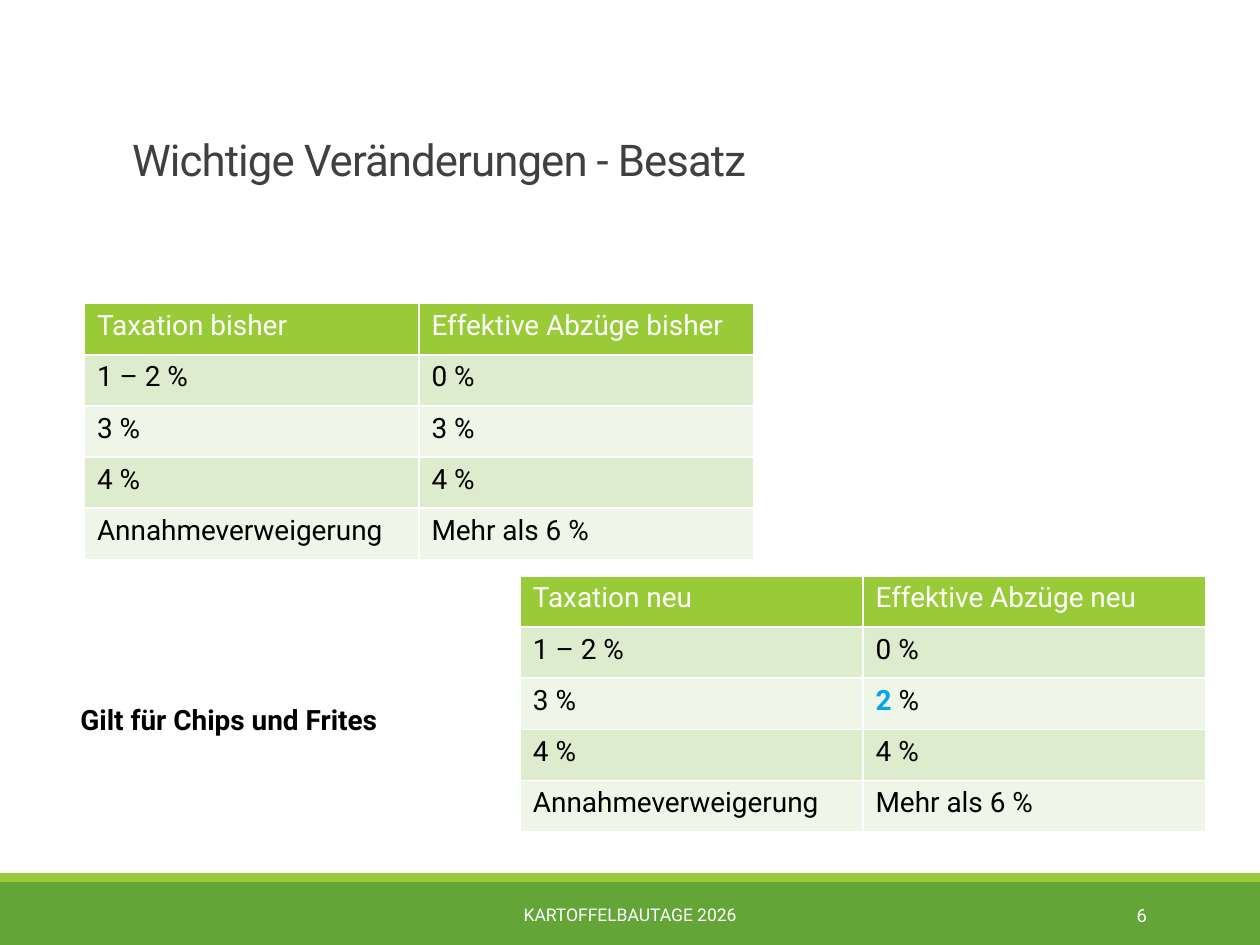
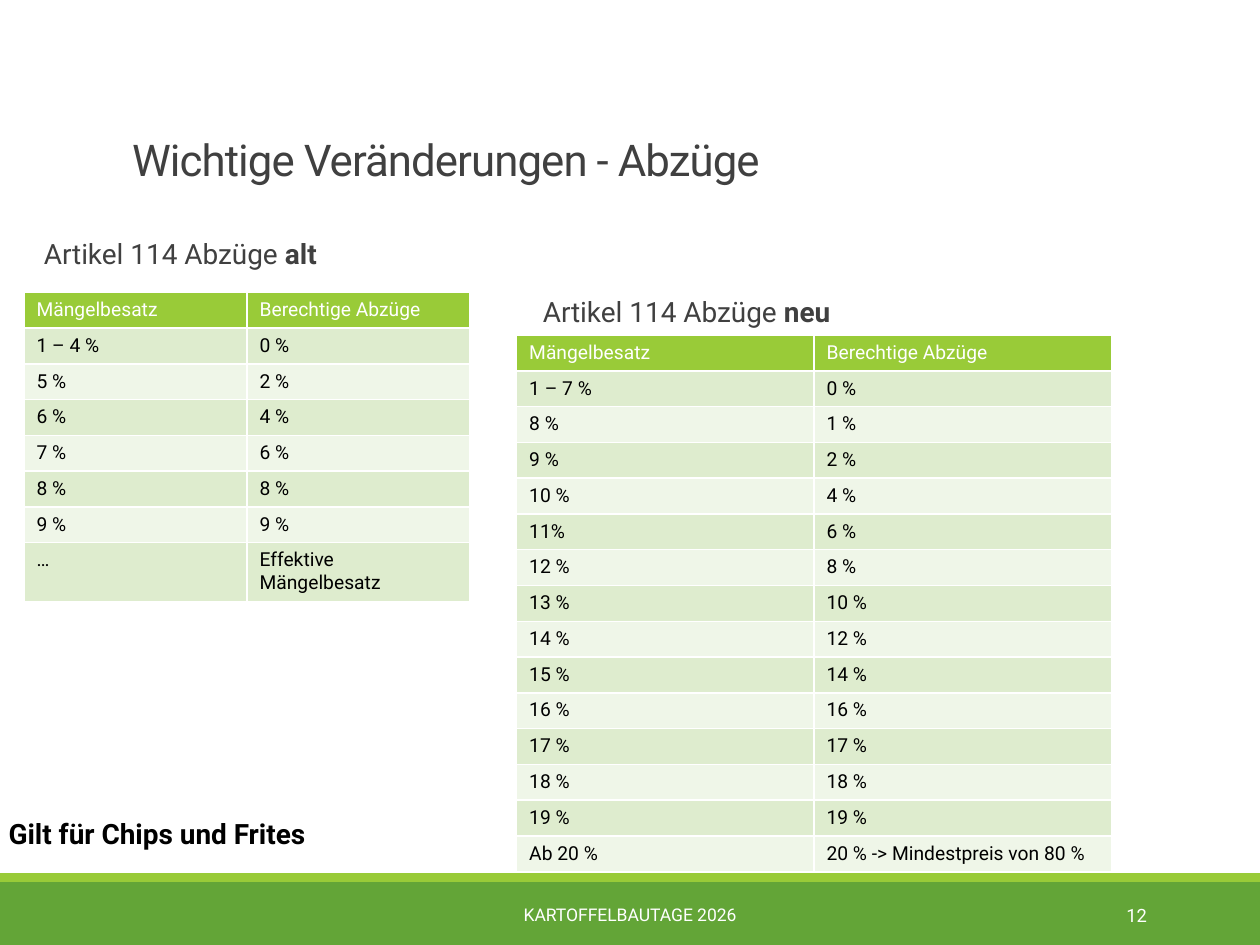
"""Builds two slides comparing the old and new deductions for potato defects."""
from dataclasses import dataclass
from typing import NamedTuple, Optional

from lxml import etree
from pptx import Presentation
from pptx import util as u
from pptx.dml.color import RGBColor
from pptx.enum import shapes, text
from pptx.oxml.ns import qn


@dataclass(frozen=True)
class Theme:
    font: str = "Roboto"
    white: str = "FFFFFF"
    black: str = "000000"
    grey: str = "404040"
    green: str = "63A537"
    lime: str = "99CB38"
    blue: str = "08A5EF"
    bands: tuple = ("DEECCE", "EFF6E8")
    title: float = 25
    body: float = 16
    small: float = 11
    number: float = 10.5
    footer: float = 10


class Run(NamedTuple):
    text: str
    bold: bool = False
    color: Optional[str] = None


class Box(NamedTuple):
    left: float
    top: float
    width: float
    height: float


@dataclass(frozen=True)
class Label:
    box: Box
    runs: tuple
    size: float
    color: str
    para: Optional[dict] = None
    anchor: text.MSO_ANCHOR = text.MSO_ANCHOR.TOP
    tracking: float = 0
    indent: float = 0


@dataclass(frozen=True)
class Grid:
    box: Box
    rows: tuple
    size: float


@dataclass(frozen=True)
class Page:
    title: str
    number: str
    labels: tuple
    grids: tuple


T = Theme()


def inches(box: Box) -> list:
    return [u.Inches(v) for v in box]


def add_runs(p, runs: tuple, size: float, color: str) -> None:
    for run in runs:
        r = p.add_run()
        r.text = run.text
        fmt = {"name": T.font, "size": u.Pt(size), "bold": run.bold}
        for key, value in fmt.items():
            setattr(r.font, key, value)
        r.font.color.rgb = RGBColor.from_string(run.color or color)


def add_label(s, label: Label) -> None:
    tf = s.shapes.add_textbox(*inches(label.box)).text_frame
    tf.word_wrap = True
    tf.vertical_anchor = label.anchor
    p = tf.paragraphs[0]
    if label.indent:
        p._p.get_or_add_pPr().set("marL", str(u.Inches(label.indent)))
    for key, value in (label.para or {}).items():
        setattr(p, key, value)
    add_runs(p, label.runs, label.size, label.color)
    if label.tracking:
        for r in p.runs:
            r.font._element.set("spc", str(int(label.tracking * 100)))


def add_band(s, box: Box, color: str) -> None:
    sp = s.shapes.add_shape(shapes.MSO_SHAPE.RECTANGLE, *inches(box))
    sp.shadow.inherit = False
    sp.fill.solid()
    sp.fill.fore_color.rgb = RGBColor.from_string(color)
    sp.line.fill.background()


def add_borders(cell) -> None:
    tc_pr = cell._tc.get_or_add_tcPr()
    for side in ("a:lnL", "a:lnR", "a:lnT", "a:lnB"):
        ln = etree.SubElement(tc_pr, qn(side), w=str(u.Pt(1)))
        fill = etree.SubElement(ln, qn("a:solidFill"))
        etree.SubElement(fill, qn("a:srgbClr"), val=T.white)


def add_grid(s, grid: Grid) -> None:
    n_rows, n_cols = len(grid.rows), len(grid.rows[0])
    table = s.shapes.add_table(n_rows, n_cols, *inches(grid.box)).table
    table.horz_banding = False
    for col in table.columns:
        col.width = u.Inches(grid.box.width / n_cols)
    for i, row in enumerate(grid.rows):
        table.rows[i].height = u.Inches(grid.box.height / n_rows)
        fill = T.bands[(i - 1) % 2] if i else T.lime
        for j, content in enumerate(row):
            cell = table.cell(i, j)
            add_borders(cell)
            cell.fill.solid()
            cell.fill.fore_color.rgb = RGBColor.from_string(fill)
            runs = (Run(content),) if isinstance(content, str) else content
            add_runs(cell.text_frame.paragraphs[0], runs, grid.size,
                     T.black if i else T.white)


def add_frame(s, page: Page) -> None:
    add_band(s, Box(0, 7, 10, 0.5), T.green)
    add_band(s, Box(0, 6.93, 10, 0.07), T.lime)
    middle = text.MSO_ANCHOR.MIDDLE
    add_label(s, Label(Box(3.02, 7.06, 3.96, 0.4), (Run("KARTOFFELBAUTAGE 2026"),),
                       T.footer, T.white, {"alignment": text.PP_ALIGN.CENTER}, middle))
    add_label(s, Label(Box(8.12, 7.06, 1.08, 0.4), (Run(page.number),),
                       T.number, T.white, {"alignment": text.PP_ALIGN.RIGHT}, middle))
    add_label(s, Label(Box(0.95, 1.07, 8.25, 1.59), (Run(page.title),),
                       T.title, T.grey, {"line_spacing": 0.85}, tracking=-0.5))


def scope_note(box: Box) -> Label:
    return Label(box, (Run("Gilt für Chips und Frites", True),), T.body, T.black)


def article_heading(box: Box, version: str) -> Label:
    return Label(box, (Run("Artikel 114 Abzüge "), Run(version, True)), T.body, T.grey,
                 {"line_spacing": 0.9, "space_after": u.Pt(2)}, indent=0.1)


def taxation_grid(box: Box, version: str, deduction) -> Grid:
    rows = ((f"Taxation {version}", f"Effektive Abzüge {version}"),
            ("1 – 2 %", "0 %"), ("3 %", deduction), ("4 %", "4 %"),
            ("Annahmeverweigerung", "Mehr als 6 %"))
    return Grid(box, rows, T.body)


def defects_grid(box: Box, *rows: tuple) -> Grid:
    return Grid(box, (("Mängelbesatz", "Berechtige Abzüge"), *rows), T.small)


PAGES = (
    Page("Wichtige Veränderungen - Besatz", "6",
         (scope_note(Box(0.54, 5.53, 5, 0.37)),),
         (taxation_grid(Box(0.67, 2.41, 5.31, 2.03), "bisher", "3 %"),
          taxation_grid(Box(4.13, 4.57, 5.44, 2.03), "neu",
                        (Run("2 ", True, T.blue), Run("%"))))),
    Page("Wichtige Veränderungen - Abzüge", "12",
         (article_heading(Box(0.15, 1.86, 5.24, 4.03), "alt"),
          scope_note(Box(-0.03, 6.43, 6.67, 0.37)),
          article_heading(Box(4.11, 2.32, 5.75, 4.03), "neu")),
         (defects_grid(Box(0.19, 2.32, 3.54, 2.27),
                       ("1 – 4 %", "0 %"), ("5 %", "2 %"), ("6 %", "4 %"),
                       ("7 %", "6 %"), ("8 %", "8 %"), ("9 %", "9 %"),
                       ("…", "Effektive Mängelbesatz")),
          defects_grid(Box(4.1, 2.66, 4.72, 4.25),
                       ("1 – 7 %", "0 %"), ("8 %", "1 %"), ("9 %", "2 %"),
                       ("10 %", "4 %"), ("11%", "6 %"), ("12 %", "8 %"),
                       ("13 %", "10 %"), ("14 %", "12 %"), ("15 %", "14 %"),
                       ("16 %", "16 %"), ("17 %", "17 %"), ("18 %", "18 %"),
                       ("19 %", "19 %"),
                       ("Ab 20 %", "20 % -> Mindestpreis von 80 %")))),
)


def main() -> None:
    prs = Presentation()
    prs.slide_width, prs.slide_height = u.Inches(10), u.Inches(7.5)
    for page in PAGES:
        s = prs.slides.add_slide(prs.slide_layouts[6])
        add_frame(s, page)
        for label in page.labels:
            add_label(s, label)
        for grid in page.grids:
            add_grid(s, grid)
    prs.save("out.pptx")


if __name__ == "__main__":
    main()
